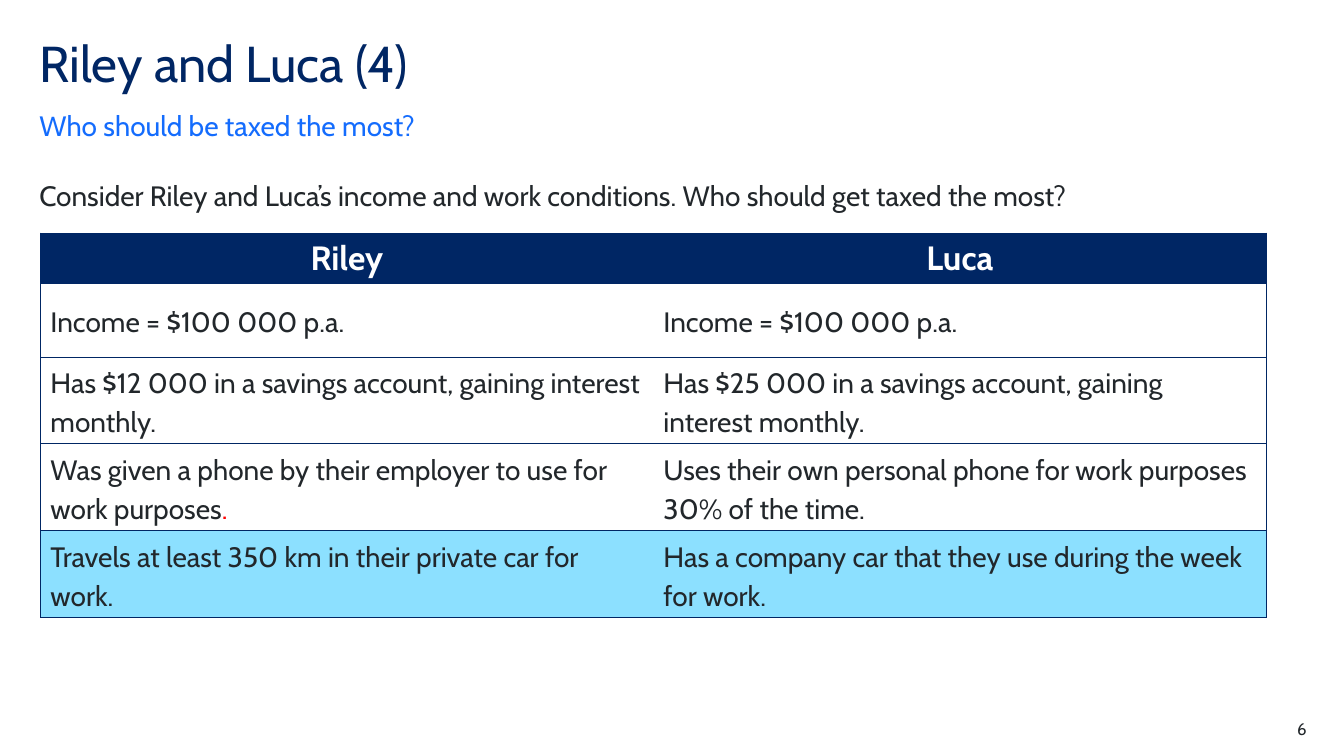
"""Builds the slide that compares the income and work conditions of Riley and Luca."""
import pptx
import pptx.util
import pptx.dml.color
import pptx.enum.text
import pptx.oxml
import pptx.oxml.ns

Inches, Pt = pptx.util.Inches, pptx.util.Pt
ALIGN, ANCHOR = pptx.enum.text.PP_ALIGN, pptx.enum.text.MSO_ANCHOR

COLORS = {"navy": "002664", "blue": "146CFD", "sky": "8CE0FF",
          "ink": "22272B", "white": "FFFFFF", "red": "FF0000"}
FONT = "Cabin"

HEADINGS = [
    ("Riley and Luca (4)", (0.39, 0.39, 11.02, 0.6),
     dict(size=36, color="navy", line_spacing=0.9)),
    ("Who should be taxed the most?", (0.39, 1.07, 11.02, 0.34),
     dict(size=20, color="blue", anchor=ANCHOR.BOTTOM)),
    ("Consider Riley and Luca’s income and work conditions. Who should get taxed the most?",
     (0.39, 1.77, 12.56, 1.08), dict(size=20)),
    ("6", (12.17, 7.13, 0.79, 0.2), dict(size=12, align=ALIGN.RIGHT)),
]

PEOPLE = ("Riley", "Luca")
CONDITIONS = [
    ("Income = $100 000 p.a.", "Income = $100 000 p.a."),
    ("Has $12 000 in a savings account, gaining interest monthly.",
     "Has $25 000 in a savings account, gaining interest monthly."),
    ([("Was given a phone by their employer to use for work purposes", "ink"), (".", "red")],
     "Uses their own personal phone for work purposes 30% of the time."),
    ("Travels at least 350 km in their private car for work.",
     "Has a company car that they use during the week for work."),
]
TABLE_LEFT, TABLE_TOP = 0.4, 2.31
COLUMN_WIDTH, HEADER_HEIGHT, CONDITION_HEIGHT = 6.08, 0.46, 0.73
BORDER_WIDTH = 0.5


def rgb(color):
    """Return the named colour as an RGBColor."""
    return pptx.dml.color.RGBColor.from_string(COLORS[color])


def write(frame, text, size=20, color="ink", bold=False, align=ALIGN.LEFT,
          line_spacing=None, anchor=None):
    """Fill a text frame with one paragraph of one or more coloured runs."""
    frame.word_wrap = True
    if anchor is not None:
        frame.vertical_anchor = anchor
    paragraph = frame.paragraphs[0]
    paragraph.alignment = align
    paragraph.line_spacing = line_spacing
    pieces = [(text, color)] if isinstance(text, str) else text
    for words, tint in pieces:
        run = paragraph.add_run()
        run.text = words
        run.font.name = FONT
        run.font.size = Pt(size)
        run.font.bold = bold
        run.font.color.rgb = rgb(tint)


def set_borders(cell, visible_sides):
    """Draw navy lines on the given sides of a cell and none on the others."""
    properties = cell._tc.get_or_add_tcPr()
    for position, side in enumerate("LRTB"):
        paint = (f'<a:solidFill><a:srgbClr val="{COLORS["navy"]}"/></a:solidFill>'
                 if side in visible_sides else "<a:noFill/>")
        properties.insert(position, pptx.oxml.parse_xml(
            f'<a:ln{side} {pptx.oxml.ns.nsdecls("a")} w="{Pt(BORDER_WIDTH)}">{paint}</a:ln{side}>'))


def add_comparison(slide):
    """Add the table with one column per person and the last condition highlighted."""
    rows = [PEOPLE] + CONDITIONS
    table = slide.shapes.add_table(
        len(rows), len(PEOPLE), Inches(TABLE_LEFT), Inches(TABLE_TOP),
        Inches(COLUMN_WIDTH * len(PEOPLE)),
        Inches(HEADER_HEIGHT + CONDITION_HEIGHT * len(CONDITIONS))).table
    table.horz_banding = False
    for column in table.columns:
        column.width = Inches(COLUMN_WIDTH)
    fills = ["navy"] + [None] * (len(CONDITIONS) - 1) + ["sky"]
    for r, (texts, fill) in enumerate(zip(rows, fills)):
        table.rows[r].height = Inches(CONDITION_HEIGHT if r else HEADER_HEIGHT)
        for c, text in enumerate(texts):
            cell = table.cell(r, c)
            if r:
                write(cell.text_frame, text, line_spacing=1.14)
                cell.vertical_anchor = ANCHOR.MIDDLE
            else:
                write(cell.text_frame, text, size=24, color="white", bold=True,
                      align=ALIGN.CENTER)
            if fill:
                cell.fill.solid()
                cell.fill.fore_color.rgb = rgb(fill)
            else:
                cell.fill.background()
            set_borders(cell, "TB" + ("R" if c else "L"))


def main():
    """Build and save the slide."""
    deck = pptx.Presentation()
    deck.slide_width, deck.slide_height = Inches(13.33), Inches(7.5)
    slide = deck.slides.add_slide(deck.slide_layouts[6])
    for text, box, style in HEADINGS:
        frame = slide.shapes.add_textbox(*map(Inches, box)).text_frame
        frame.margin_left = frame.margin_right = frame.margin_top = frame.margin_bottom = 0
        write(frame, text, **style)
    add_comparison(slide)
    deck.save("out.pptx")


if __name__ == "__main__":
    main()
